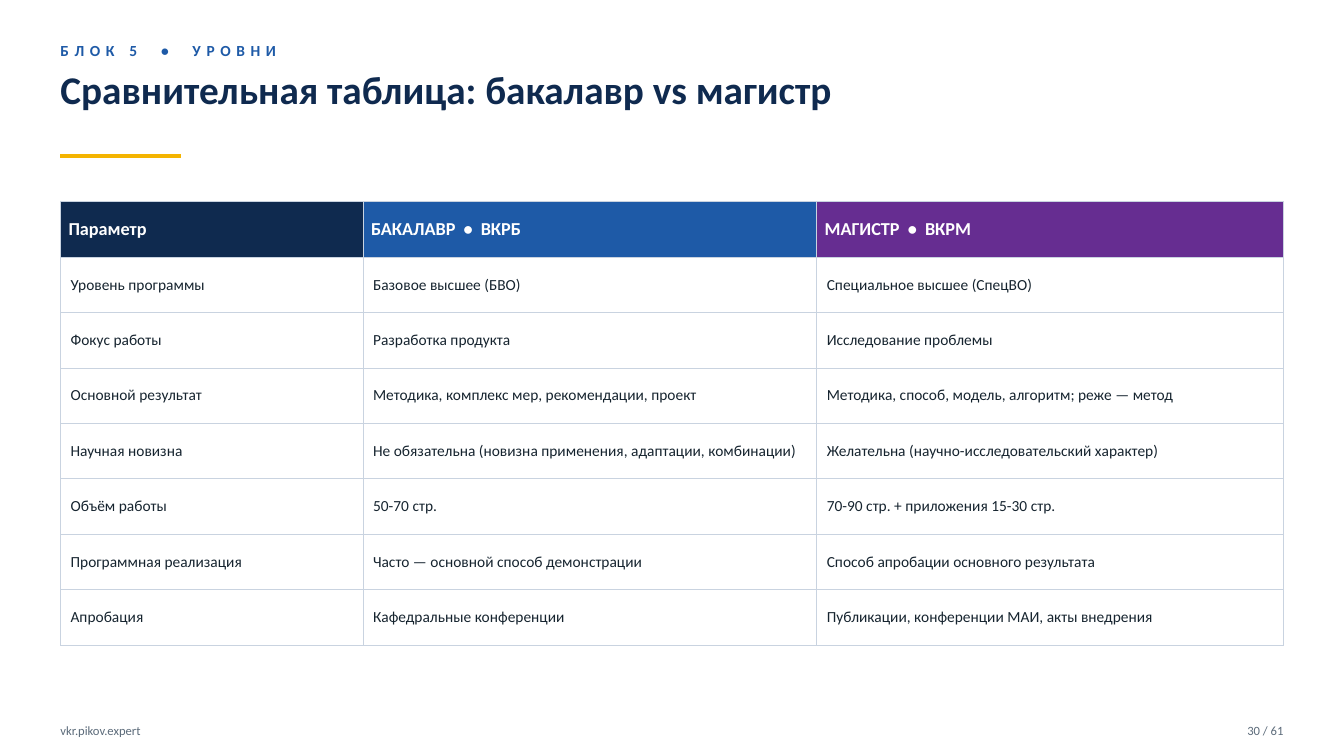
from dataclasses import dataclass

from lxml import etree
from pptx import Presentation
from pptx import util as u
from pptx.dml.color import RGBColor
from pptx.enum import shapes, text
from pptx.oxml import ns


@dataclass(frozen=True)
class Theme:
    """Colours, type sizes and font of the deck."""
    face: str = "Calibri"
    navy: str = "0F2A4F"
    blue: str = "1E5AA7"
    plum: str = "662D91"
    gold: str = "F4B400"
    ink: str = "16242F"
    grey: str = "5C6B7A"
    rule: str = "C9D3E0"
    white: str = "FFFFFF"
    title: int = 28
    head: int = 13
    body: int = 11
    foot: int = 9


T = Theme()
SCALE = 9144
SPACE = 0.226
HEADS = [
    (["Параметр"], T.navy),
    (["БАКАЛАВР", "ВКРБ"], T.blue),
    (["МАГИСТР", "ВКРМ"], T.plum),
]
ROWS = [
    ("Уровень программы", "Базовое высшее (БВО)", "Специальное высшее (СпецВО)"),
    ("Фокус работы", "Разработка продукта", "Исследование проблемы"),
    ("Основной результат", "Методика, комплекс мер, рекомендации, проект",
     "Методика, способ, модель, алгоритм; реже — метод"),
    ("Научная новизна", "Не обязательна (новизна применения, адаптации, комбинации)",
     "Желательна (научно-исследовательский характер)"),
    ("Объём работы", "50-70 стр.", "70-90 стр. + приложения 15-30 стр."),
    ("Программная реализация", "Часто — основной способ демонстрации",
     "Способ апробации основного результата"),
    ("Апробация", "Кафедральные конференции",
     "Публикации, конференции МАИ, акты внедрения"),
]


def px(*vals):
    """Turn px lengths into EMU."""
    return [u.Emu(v * SCALE) for v in vals]


def rgb(tone):
    """Return a colour object for a hex tone."""
    return RGBColor.from_string(tone)


def add_run(par, words, size, tone, bold=False, track=0):
    """Add one styled run, with tracking in points."""
    run = par.add_run()
    run.text = words
    font = run.font
    font.name, font.size, font.bold = T.face, u.Pt(size), bold
    font.color.rgb = rgb(tone)
    if track:
        run._r.get_or_add_rPr().set("spc", str(round(track * 100)))


def add_dots(par, parts, size, tone, track=0):
    """Add bold parts joined by widely spaced dots."""
    gap = 2 * track + size * SPACE
    for i, part in enumerate(parts):
        if i:
            for mark, wide in ((" ", gap), ("•", track), (" ", gap)):
                add_run(par, mark, size, tone, True, wide)
        add_run(par, part, size, tone, True, track)


def set_frame(shape, anchor):
    """Clear the insets of a text frame and return its first paragraph."""
    frame = shape.text_frame
    frame.word_wrap = True
    frame.auto_size = text.MSO_AUTO_SIZE.NONE
    frame.vertical_anchor = anchor
    frame.margin_left = frame.margin_right = 0
    frame.margin_top = frame.margin_bottom = 0
    return frame.paragraphs[0]


def add_box(slide, box):
    """Add a text box centred in height and return its paragraph."""
    shape = slide.shapes.add_textbox(*px(*box))
    return set_frame(shape, text.MSO_ANCHOR.MIDDLE)


def draw_head(slide, box):
    """Place the block label, the title and the gold rule."""
    x, y, w, h = box
    label = add_box(slide, (x, y, 600, 30))
    add_dots(label, ["БЛОК 5", "УРОВНИ"], T.body, T.blue, 4)
    title = slide.shapes.title
    title.left, title.top, title.width, title.height = px(x, y + 30, w, 85)
    par = set_frame(title, text.MSO_ANCHOR.TOP)
    par.alignment = text.PP_ALIGN.LEFT
    add_run(par, "Сравнительная таблица: бакалавр vs магистр", T.title, T.navy, True)
    line = slide.shapes.add_connector(
        shapes.MSO_CONNECTOR.STRAIGHT, *px(x, y + h, x + 120, y + h))
    line.line.color.rgb = rgb(T.gold)
    line.line.width = u.Pt(3)
    etree.SubElement(line._element.spPr, ns.qn("a:effectLst"))


def set_edges(cell):
    """Draw a thin line on all four sides of a cell."""
    props = cell._tc.get_or_add_tcPr()
    for i, side in enumerate(("lnL", "lnR", "lnT", "lnB")):
        edge = etree.Element(ns.qn("a:" + side), w=str(u.Pt(0.5)))
        fill = etree.SubElement(edge, ns.qn("a:solidFill"))
        etree.SubElement(fill, ns.qn("a:srgbClr"), val=T.rule)
        props.insert(i, edge)


def draw_table(slide, box):
    """Place the comparison table with equal rows."""
    x, y, w, h = box
    count = len(ROWS) + 1
    table = slide.shapes.add_table(count, len(HEADS), *px(x, y, w, h)).table
    table.first_row = table.horz_banding = False
    for col, wide in zip(table.columns, px(300, 450, w - 750)):
        col.width = wide
    for row in table.rows:
        row.height = px(h // count)[0]
    for cell, (parts, tone) in zip(table.rows[0].cells, HEADS):
        cell.fill.solid()
        cell.fill.fore_color.rgb = rgb(tone)
        cell.margin_left = cell.margin_right = px(8)[0]
        cell.margin_top = cell.margin_bottom = px(8)[0]
        add_dots(cell.text_frame.paragraphs[0], parts, T.head, T.white)
    for i, row in enumerate(ROWS, 1):
        for cell, words in zip(table.rows[i].cells, row):
            cell.fill.background()
            add_run(cell.text_frame.paragraphs[0], words, T.body, T.ink)
    for cell in table.iter_cells():
        cell.vertical_anchor = text.MSO_ANCHOR.MIDDLE
        set_edges(cell)


def draw_foot(slide, box):
    """Place the site address and the page count."""
    x, y, w, h = box
    site = add_box(slide, (x, y, 400, h))
    add_run(site, "vkr.pikov.expert", T.foot, T.grey)
    page = add_box(slide, (x + w - 100, y, 100, h))
    page.alignment = text.PP_ALIGN.RIGHT
    add_run(page, "30 / 61", T.foot, T.grey)


def main():
    """Build the slide and save it."""
    deck = Presentation()
    deck.slide_width, deck.slide_height = px(1333, 750)
    slide = deck.slides.add_slide(deck.slide_layouts[5])
    draw_head(slide, (60, 35, 1213, 120))
    draw_table(slide, (60, 200, 1213, 440))
    draw_foot(slide, (60, 710, 1213, 30))
    deck.save("out.pptx")


if __name__ == "__main__":
    main()
